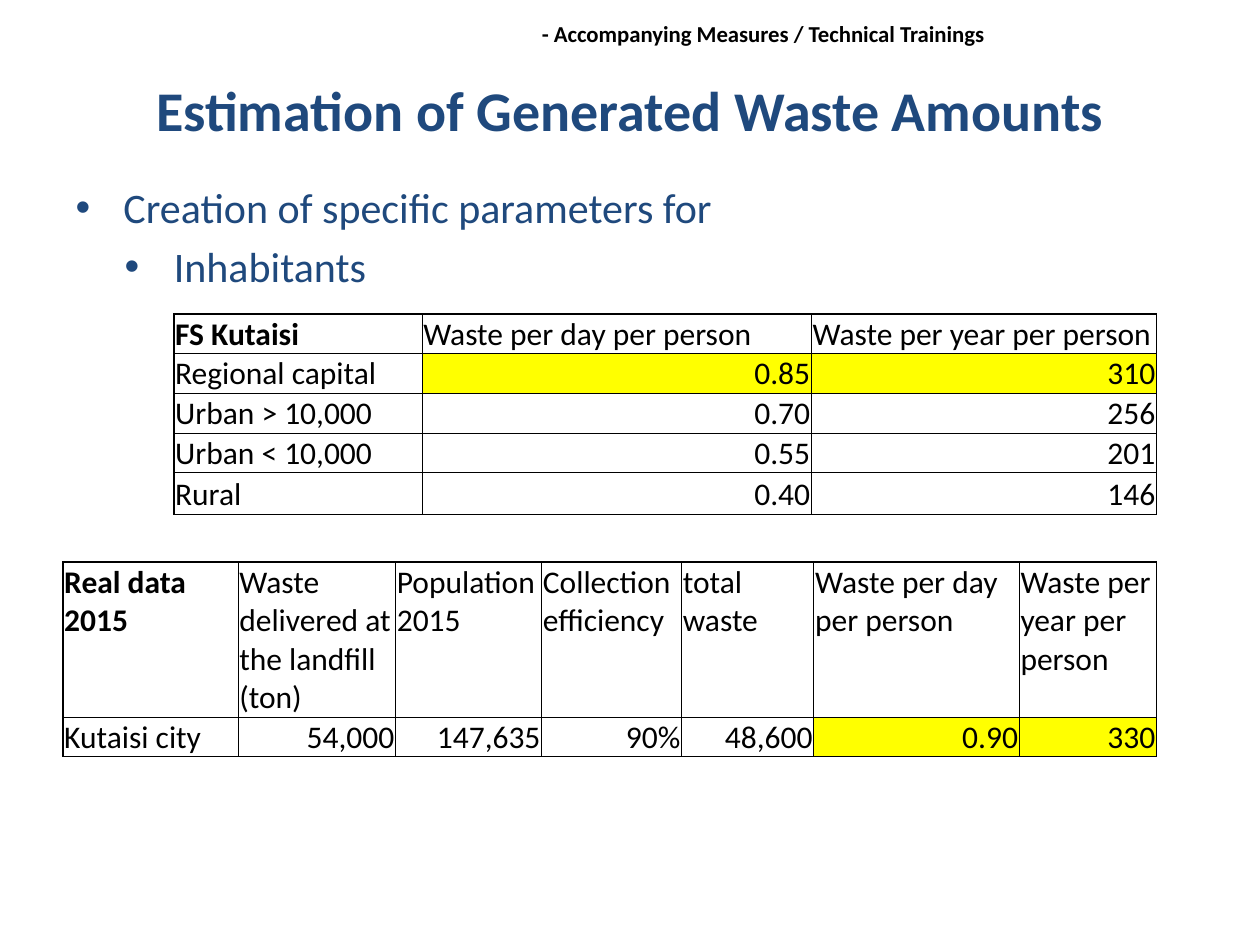
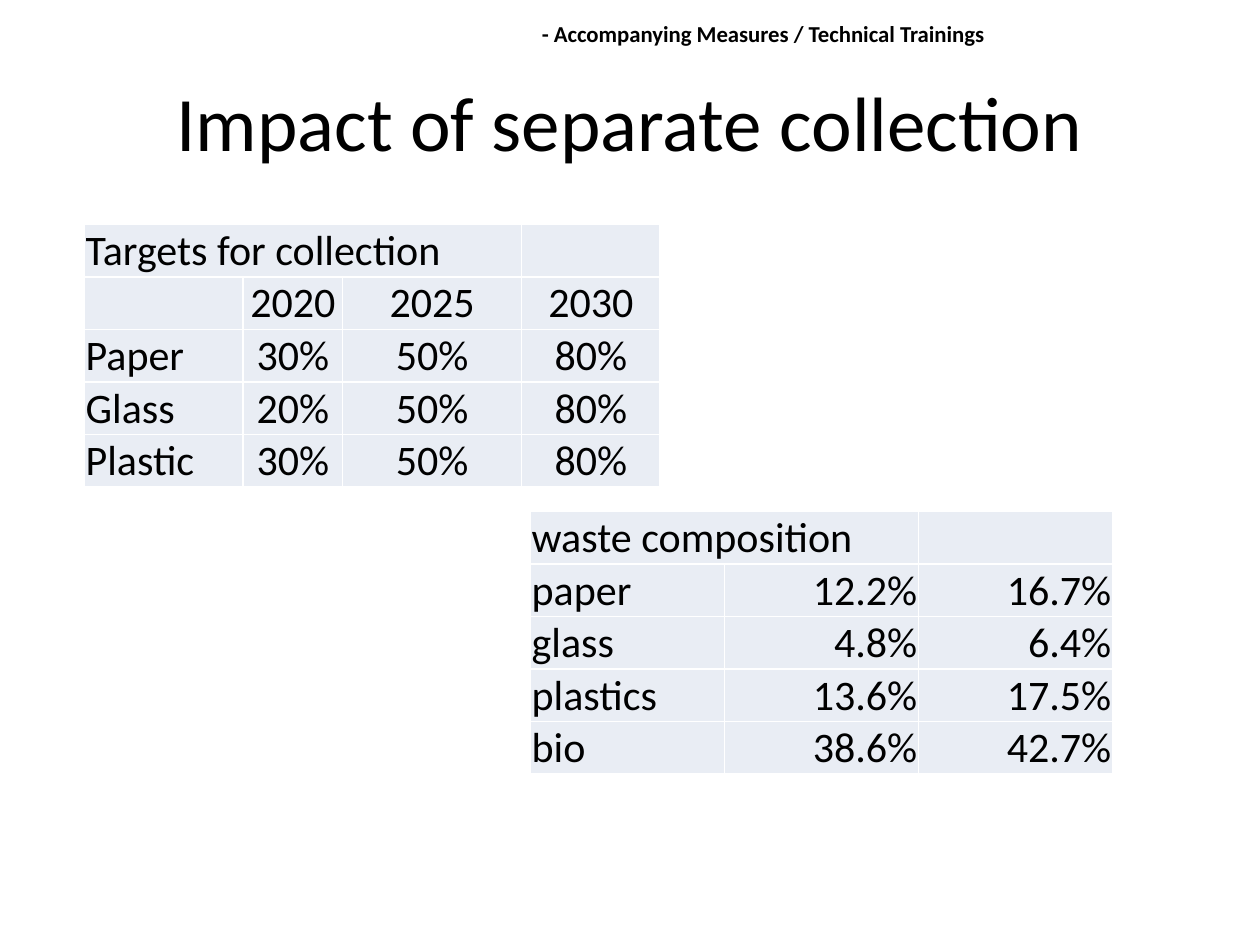
from pptx import Presentation
from pptx.dml.color import RGBColor
from pptx.enum.shapes import MSO_SHAPE as SHAPE
from pptx.enum.text import MSO_ANCHOR as ANCHOR, MSO_AUTO_SIZE as FIT, PP_ALIGN as ALIGN
from pptx.oxml.ns import qn
from pptx.util import Inches, Pt
from lxml.etree import SubElement, Element

FONT = "Calibri"
BLACK, WHITE, NAVY = "000000", "FFFFFF", "1F497D"
YELLOW, PALE = "FFFF00", "E9EDF4"
COLS, ROWS = 100, 75


def rgb(color):
    return RGBColor.from_string(color)


class Deck:
    def __init__(self):
        self.prs = Presentation()
        self.prs.slide_width, self.prs.slide_height = Inches(10), Inches(7.5)
        self.s = None

    def x(self, cols):
        return int(self.prs.slide_width * cols / COLS)

    def y(self, rows):
        return int(self.prs.slide_height * rows / ROWS)

    def place(self, sp, left, top, width, height):
        sp.left, sp.top = self.x(left), self.y(top)
        sp.width, sp.height = self.x(width), self.y(height)

    def run(self, p, text, size, color=BLACK, bold=False):
        r = p.add_run()
        r.text = text
        r.font.name, r.font.size, r.font.bold = FONT, Pt(size), bold
        r.font.color.rgb = rgb(color)

    def slide(self, layout):
        self.s = self.prs.slides.add_slide(self.prs.slide_layouts[layout])

    def master_band(self, text):
        sp = self.s.shapes.add_shape(
            SHAPE.RECTANGLE, self.x(42.2), self.y(1.1), self.x(39.8), self.y(3.1))
        sp.shadow.inherit = False
        sp.fill.solid()
        sp.fill.fore_color.rgb = rgb(WHITE)
        sp.line.fill.background()
        tf = sp.text_frame
        tf.word_wrap, tf.vertical_anchor = True, ANCHOR.MIDDLE
        tf.margin_left = self.x(0.8)
        tf.margin_top = tf.margin_right = tf.margin_bottom = self.x(0.4)
        p = tf.paragraphs[0]
        p.alignment = ALIGN.LEFT
        self.run(p, text, 13, bold=True)
        sp.element.nvSpPr.cNvPr.set("id", "99")
        self.prs.slide_master.shapes.element.append(sp.element)

    def title(self, text, size, color=BLACK, bold=False):
        sp = self.s.shapes.title
        self.place(sp, 5, 5.2, 90, 7.1)
        tf = sp.text_frame
        tf.auto_size, tf.vertical_anchor = FIT.NONE, ANCHOR.TOP
        tf.margin_top = self.y(0.75)
        p = tf.paragraphs[0]
        p.alignment = ALIGN.CENTER
        self.run(p, text, size, color, bold)

    def bullets(self, items):
        sp = self.s.placeholders[1]
        self.place(sp, 5, 13.9, 90, 49.6)
        tf = sp.text_frame
        tf.auto_size = FIT.NONE
        for i, (text, indent, hang) in enumerate(items):
            p = tf.add_paragraph() if i else tf.paragraphs[0]
            p.level = i
            pPr = p._p.get_or_add_pPr()
            pPr.set("marL", str(self.x(indent)))
            pPr.set("indent", str(-self.x(hang)))
            SubElement(pPr, qn("a:buChar")).set("char", "•")
            p.space_before = Pt(5 if i else 0)
            self.run(p, text, 24, NAVY)

    def borders(self, cell, color, widths):
        tcPr = cell._tc.get_or_add_tcPr()
        for i, (side, width) in enumerate(zip("LRTB", widths)):
            ln = Element(qn(f"a:ln{side}"), w=str(Pt(width)))
            fill = SubElement(ln, qn("a:solidFill"))
            SubElement(fill, qn("a:srgbClr")).set("val", color)
            tcPr.insert(i, ln)

    def table(self, left, top, widths, heights, rows, size, aligns, anchors,
              line=BLACK, inner=1, foot=1, fill=None, marked=(), bold=(), span=1):
        nr, nc = len(rows), len(widths)
        frame = self.s.shapes.add_table(
            nr, nc, self.x(left), self.y(top), self.x(sum(widths)), self.y(sum(heights)))
        tbl = frame.table
        tbl.first_row = tbl.horz_banding = False
        for col, width in zip(tbl.columns, widths):
            col.width = self.x(width)
        for row, height in zip(tbl.rows, heights):
            row.height = self.y(height)
        for i, row in enumerate(rows):
            for j, text in enumerate(row):
                cell = tbl.cell(i, j)
                cell.margin_left = cell.margin_right = cell.margin_top = self.x(0.1)
                cell.margin_bottom = 0
                cell.vertical_anchor = anchors[i > 0]
                shade = YELLOW if (i, j) in marked else fill
                if shade:
                    cell.fill.solid()
                    cell.fill.fore_color.rgb = rgb(shade)
                else:
                    cell.fill.background()
                self.borders(cell, line, (
                    inner if j else 1, inner if j < nc - 1 else 1,
                    inner if i else 1, inner if i < nr - 1 else foot))
                if text:
                    p = cell.text_frame.paragraphs[0]
                    p.alignment = ALIGN.LEFT if i == 0 else aligns[j > 0]
                    self.run(p, text, size, bold=(i, j) in bold)
        if span > 1:
            tbl.cell(0, 0).merge(tbl.cell(0, span - 1))


def waste_amounts(deck):
    deck.title("Estimation of Generated Waste Amounts", 32, NAVY, True)
    deck.bullets([("Creation of specific parameters for", 3.8, 3.8),
                  ("Inhabitants", 7.8, 3.9)])
    ruled = dict(size=18, aligns=(ALIGN.LEFT, ALIGN.RIGHT),
                 anchors=(ANCHOR.TOP, ANCHOR.BOTTOM), inner=0.5, bold={(0, 0)})
    deck.table(13.8, 24.9, [19.7, 30.9, 27.4], [3.1] * 4 + [3.3], [
        ["FS Kutaisi", "Waste per day per person", "Waste per year per person"],
        ["Regional capital", "0.85", "310"],
        ["Urban > 10,000", "0.70", "256"],
        ["Urban < 10,000", "0.55", "201"],
        ["Rural", "0.40", "146"],
    ], marked={(1, 1), (1, 2)}, **ruled)
    deck.table(5, 44.6, [13.9, 12.5, 11.6, 11.1, 10.5, 16.3, 10.9], [12.3, 3.1], [
        ["Real data 2015", "Waste delivered at the landfill (ton)", "Population 2015",
         "Collection efficiency", "total waste", "Waste per day per person",
         "Waste per year per person"],
        ["Kutaisi city", "54,000", "147,635", "90%", "48,600", "0.90", "330"],
    ], marked={(1, 5), (1, 6)}, foot=0.5, **ruled)


def separate_collection(deck):
    deck.title("Impact of separate collection", 44)
    shaded = dict(size=24, line=WHITE, fill=PALE, heights=[4.15] * 5)
    deck.table(6.7, 17.8, [12.6, 7.9, 14.2, 11], rows=[
        ["Targets for collection", "", "", ""],
        ["", "2020", "2025", "2030"],
        ["Paper", "30%", "50%", "80%"],
        ["Glass", "20%", "50%", "80%"],
        ["Plastic", "30%", "50%", "80%"],
    ], aligns=(ALIGN.JUSTIFY, ALIGN.CENTER),
        anchors=(ANCHOR.BOTTOM, ANCHOR.MIDDLE), span=3, **shaded)
    deck.table(42.1, 40.6, [15.4] * 3, rows=[
        ["waste composition", "", ""],
        ["paper", "12.2%", "16.7%"],
        ["glass", "4.8%", "6.4%"],
        ["plastics", "13.6%", "17.5%"],
        ["bio", "38.6%", "42.7%"],
    ], aligns=(ALIGN.LEFT, ALIGN.RIGHT),
        anchors=(ANCHOR.BOTTOM, ANCHOR.BOTTOM), span=2, **shaded)


def main():
    deck = Deck()
    deck.slide(1)
    deck.master_band("- Accompanying Measures / Technical Trainings")
    waste_amounts(deck)
    deck.slide(5)
    separate_collection(deck)
    deck.prs.save("out.pptx")


if __name__ == "__main__":
    main()
